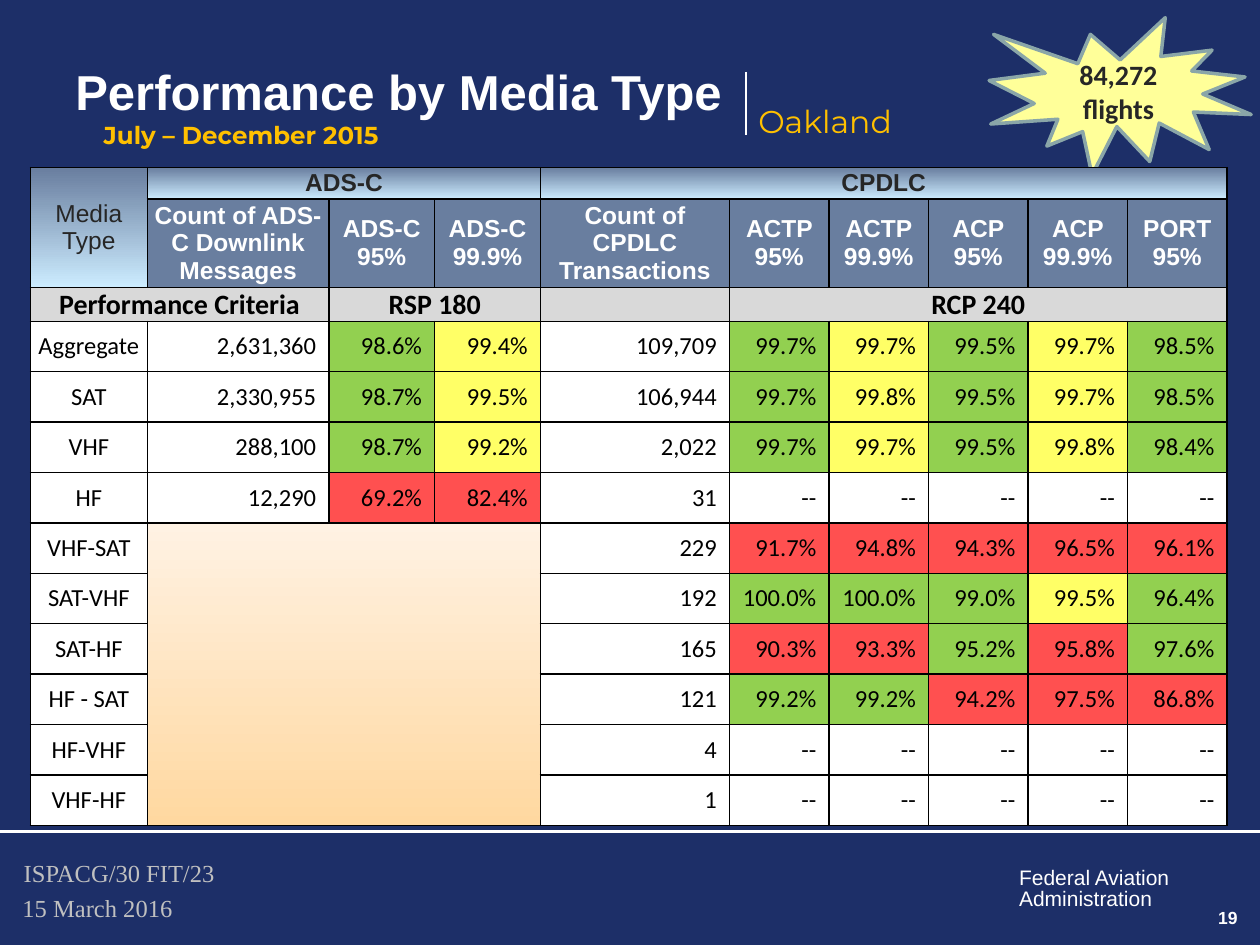
from lxml import etree
from pptx import Presentation
from pptx.dml.color import RGBColor as RGB
from pptx.enum.shapes import MSO_CONNECTOR as LINE, MSO_SHAPE as SHAPE
from pptx.enum.text import MSO_ANCHOR as ANCHOR, PP_ALIGN as ALIGN
from pptx.oxml.ns import qn
from pptx.util import Inches, Pt

COLORS = {
    "navy": "1D2F68", "white": "FFFFFF", "black": "000000", "ink": "262626",
    "gold": "FFC000", "silver": "C0C0C0", "burst": "FFFF99", "edge": "8AA6A8",
    "slate": "697E9F", "sky": "CCECFF", "gray": "D9D9D9", "cream": "FFF2E3",
    "peach": "FFD8A0", "green": "92D050", "yellow": "FFFF66", "red": "FF5050",
}
TONES = {"g": "green", "y": "yellow", "r": "red", "w": "white"}


def color(name):
    return RGB.from_string(COLORS[name])


class Deck:
    face = "Arial"

    def __init__(self):
        self.prs = Presentation()
        self.prs.slide_width, self.prs.slide_height = Inches(10), Inches(7.5)
        self.slide = self.prs.slides.add_slide(self.prs.slide_layouts[6])
        self.shapes = self.slide.shapes
        back = self.slide.background.fill
        back.solid()
        back.fore_color.rgb = color("navy")

    def label(self, frame, text, size, tint, face=None, bold=False, **form):
        """Fill a frame with one paragraph per line of text."""
        for i, line in enumerate(text.split("\n")):
            para = frame.paragraphs[0] if i == 0 else frame.add_paragraph()
            for key, val in form.items():
                setattr(para, key, val)
            run = para.add_run()
            run.text = line
            font = {"name": face or self.face, "size": Pt(size), "bold": bold}
            for key, val in font.items():
                setattr(run.font, key, val)
            run.font.color.rgb = color(tint)

    def text(self, box, text, size, tint, wrap=True, anchor=ANCHOR.TOP, **form):
        frame = self.shapes.add_textbox(*map(Inches, box)).text_frame
        frame.word_wrap, frame.vertical_anchor = wrap, anchor
        self.label(frame, text, size, tint, **form)

    def line(self, ends, width):
        line = self.shapes.add_connector(LINE.STRAIGHT, *map(Inches, ends))
        line.line.color.rgb = color("white")
        line.line.width = Pt(width)
        etree.SubElement(line._element.spPr, qn("a:effectLst"))

    def burst(self, box, text):
        star = self.shapes.add_shape(SHAPE.EXPLOSION1, *map(Inches, box))
        star.shadow.inherit = False
        star.fill.solid()
        star.fill.fore_color.rgb = color("burst")
        star.line.color.rgb = color("edge")
        star.line.width = Pt(2)
        star.text_frame.vertical_anchor = ANCHOR.MIDDLE
        self.label(star.text_frame, text, 16, "ink", face="Calibri",
                   bold=True, alignment=ALIGN.CENTER)

    def table(self, left, top, cols, rows):
        frame = self.shapes.add_table(len(rows), len(cols), Inches(left), Inches(top),
                                      Inches(sum(cols)), Inches(sum(rows)))
        grid = frame.table
        grid.first_row = grid.horz_banding = False
        for col, wide in zip(grid.columns, cols):
            col.width = Inches(wide)
        for row, high in zip(grid.rows, rows):
            row.height = Inches(high)
        for cell in grid.iter_cells():
            self.paint(cell, "white")
            self.border(cell)
            self.inset(cell, 0, 0)
            end = cell.text_frame.paragraphs[0]._p.get_or_add_endParaRPr()
            end.set("sz", "1400")
        return grid

    def paint(self, cell, *tints):
        """One tint gives a solid fill, two a fade from top to bottom."""
        if len(tints) == 1:
            cell.fill.solid()
            cell.fill.fore_color.rgb = color(tints[0])
            return
        cell.fill.gradient()
        cell.fill.gradient_angle = 270
        for stop, tint in zip(cell.fill.gradient_stops, tints):
            stop.color.rgb = color(tint)

    def border(self, cell):
        props = cell._tc.get_or_add_tcPr()
        for i, side in enumerate(("lnL", "lnR", "lnT", "lnB")):
            edge = etree.Element(qn("a:" + side), w=str(Pt(1)))
            fill = etree.SubElement(edge, qn("a:solidFill"))
            etree.SubElement(fill, qn("a:srgbClr"), val=COLORS["black"])
            props.insert(i, edge)

    def inset(self, cell, wide, high):
        cell.margin_left = cell.margin_right = Inches(wide)
        cell.margin_top = cell.margin_bottom = Inches(high)

    def cell(self, cell, text, size, tint, pad=(0.04, 0), gap=0,
             align=ALIGN.CENTER, **form):
        cell.vertical_anchor = ANCHOR.MIDDLE
        self.inset(cell, *pad)
        self.label(cell.text_frame, text, size, tint, alignment=align,
                   space_after=Pt(gap), **form)


HEADS = ["Count of ADS-C Downlink Messages", "ADS-C 95%", "ADS-C 99.9%",
         "Count of CPDLC Transactions", "ACTP 95%", "ACTP 99.9%",
         "ACP 95%", "ACP 99.9%", "PORT 95%"]

# Media type, ADS-C values and tones, CPDLC values and tones
MEDIA = [
    ("Aggregate", "2,631,360 98.6% 99.4%", "wgy",
     "109,709 99.7% 99.7% 99.5% 99.7% 98.5%", "wgygyg"),
    ("SAT", "2,330,955 98.7% 99.5%", "wgy",
     "106,944 99.7% 99.8% 99.5% 99.7% 98.5%", "wgygyg"),
    ("VHF", "288,100 98.7% 99.2%", "wgy",
     "2,022 99.7% 99.7% 99.5% 99.8% 98.4%", "wgygyg"),
    ("HF", "12,290 69.2% 82.4%", "wrr", "31 -- -- -- -- --", "wwwwww"),
    ("VHF-SAT", "", "", "229 91.7% 94.8% 94.3% 96.5% 96.1%", "wrrrrr"),
    ("SAT-VHF", "", "", "192 100.0% 100.0% 99.0% 99.5% 96.4%", "wgggyg"),
    ("SAT-HF", "", "", "165 90.3% 93.3% 95.2% 95.8% 97.6%", "wrrgrg"),
    ("HF - SAT", "", "", "121 99.2% 99.2% 94.2% 97.5% 86.8%", "wggrrr"),
    ("HF-VHF", "", "", "4 -- -- -- -- --", "wwwwww"),
    ("VHF-HF", "", "", "1 -- -- -- -- --", "wwwwww"),
]


def fill_table(deck):
    cols = [0.93, 1.44, 0.84, 0.84, 1.5] + [0.79] * 5
    grid = deck.table(0.24, 1.33, cols, [0.25, 0.7, 0.27] + [0.4] * len(MEDIA))

    # Group headings: row, column, last row, last column
    for r, c, r2, c2, text, bold in [(0, 0, 1, 0, "Media Type", False),
                                     (0, 1, 0, 3, "ADS-C", True),
                                     (0, 4, 0, 9, "CPDLC", True)]:
        cell = grid.cell(r, c)
        cell.merge(grid.cell(r2, c2))
        deck.paint(cell, "slate", "sky")
        deck.cell(cell, text, 14, "ink", bold=bold)

    # Column headings
    for c, text in enumerate(HEADS, 1):
        deck.paint(grid.cell(1, c), "slate")
        deck.cell(grid.cell(1, c), text, 14, "white", bold=True,
                  pad=(0 if c == 4 else 0.04, 0))

    # Criteria row
    deck.paint(grid.cell(2, 4), "gray")
    for c, c2, text in [(0, 1, "Performance Criteria"), (2, 3, "RSP 180"),
                        (5, 9, "RCP 240")]:
        cell = grid.cell(2, c)
        cell.merge(grid.cell(2, c2))
        deck.paint(cell, "gray")
        deck.cell(cell, text, 16, "black", pad=(0.01, 0),
                  face="Calibri", bold=True)

    # Media rows
    for r, (name, *parts) in enumerate(MEDIA, 3):
        deck.cell(grid.cell(r, 0), name, 14, "black", pad=(0.05, 0.05),
                  gap=2, face="Calibri")
        for start, vals, tones in ((1, *parts[:2]), (4, *parts[2:])):
            for c, (val, tone) in enumerate(zip(vals.split(), tones), start):
                deck.paint(grid.cell(r, c), TONES[tone])
                deck.cell(grid.cell(r, c), val, 14, "black", pad=(0.1, 0.05),
                          align=ALIGN.RIGHT, face="Calibri")

    # Empty block under ADS-C
    block = grid.cell(7, 1)
    block.merge(grid.cell(12, 3))
    deck.paint(block, "cream", "peach")


def main():
    deck = Deck()
    # Footer
    deck.text((7.99, 6.84, 1.4, 0.44), "Federal Aviation\nAdministration", 12,
              "white", wrap=False, line_spacing=0.85)
    deck.line((0, 6.6, 10, 6.6), 1.5)
    for box, text in [((0.09, 6.76, 5.23, 0.34), "ISPACG/30 FIT/23"),
                      ((0.08, 7.04, 4.09, 0.34), "15 March 2016")]:
        deck.text(box, text, 14, "silver", face="Times New Roman")
    deck.text((8.25, 7.15, 1.67, 0.52), "19", 10, "white", bold=True,
              alignment=ALIGN.RIGHT)
    # Heading
    deck.text((0.5, 0.42, 9, 0.6), "Performance by Media Type", 28, "white",
              anchor=ANCHOR.MIDDLE, bold=True)
    deck.text((5.92, 0.76, 3.83, 0.4), "Oakland", 18, "gold", face="Montserrat")
    deck.line((5.92, 0.57, 5.92, 1.07), 0.75)
    deck.burst((7.85, 0.14, 2.08, 1.25), "84,272\nflights")
    # Results
    fill_table(deck)
    deck.text((0.58, 0.9, 2.67, 0.34), "July – December 2015", 14, "gold",
              face="Montserrat", bold=True, alignment=ALIGN.CENTER)
    deck.prs.save("out.pptx")


if __name__ == "__main__":
    main()
